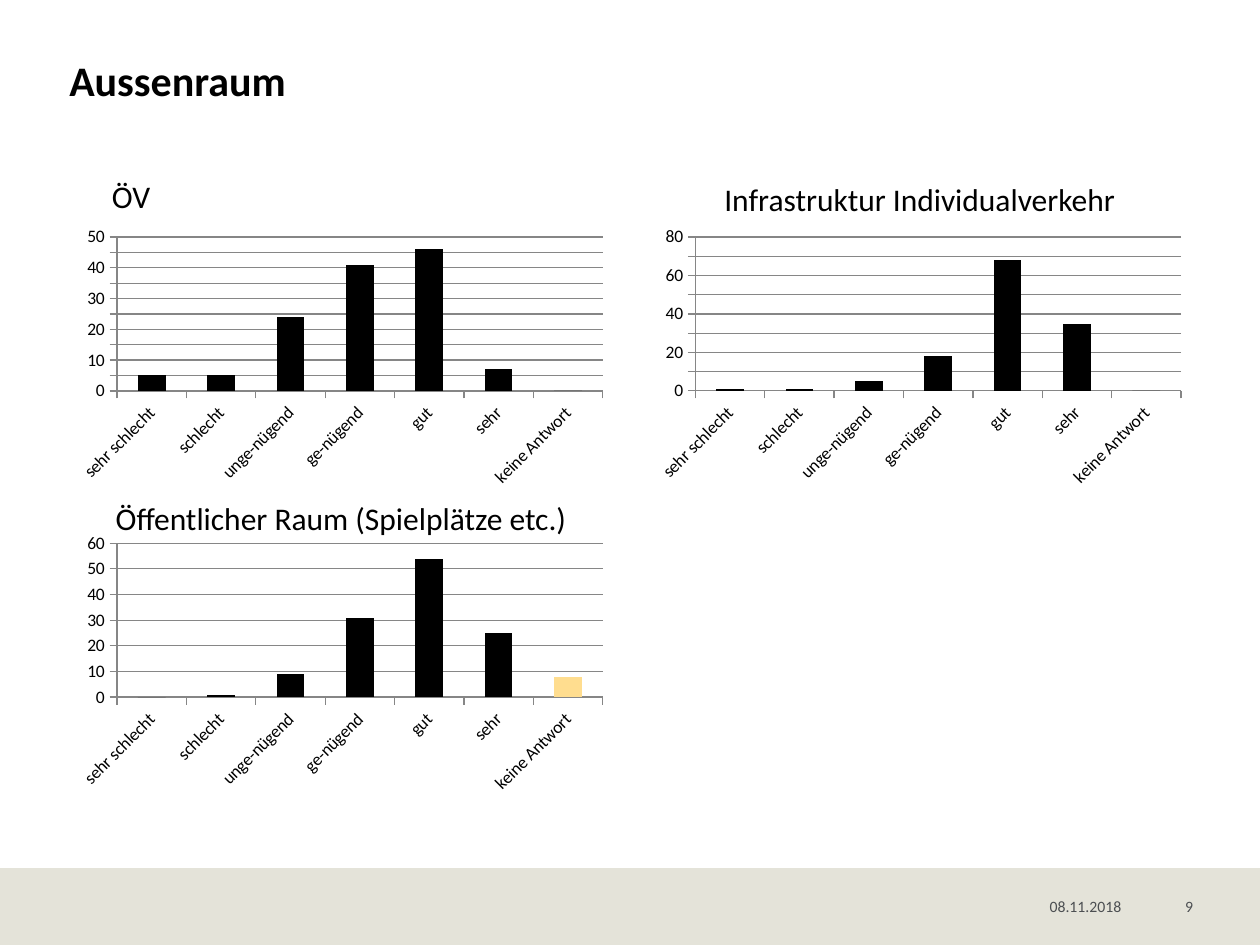
from dataclasses import dataclass

from lxml import etree
from pptx import Presentation
from pptx import util as u
from pptx.chart.data import CategoryChartData
from pptx.dml.color import RGBColor
from pptx.enum import chart as charts, shapes, text
from pptx.oxml.ns import qn


@dataclass(frozen=True)
class Theme:
    font: str = "Calibri"
    black: RGBColor = RGBColor(0x00, 0x00, 0x00)
    band: RGBColor = RGBColor(0xE4, 0xE3, 0xD9)
    footer: RGBColor = RGBColor(0x4C, 0x4F, 0x52)
    grid: RGBColor = RGBColor(0x86, 0x86, 0x86)
    highlight: RGBColor = RGBColor(0xFF, 0xDD, 0x8F)
    title_size: int = 24
    heading_size: int = 18
    axis_size: int = 10
    footer_size: int = 9


THEME = Theme()
RATINGS = ["sehr schlecht", "schlecht", "unge-nügend", "ge-nügend",
           "gut", "sehr", "keine Antwort"]
CHART_WIDTH, CHART_HEIGHT = 4.32, 2.15
LEFT, RIGHT = 0.55, 5.14
TOP, BOTTOM = 1.76, 4.19

# Heading, heading box, chart position, values, axis maximum, axis step, coloured bars
QUESTIONS = [
    ("ÖV", (0.79, 1.36, 0.51, 0.4), (LEFT, TOP),
     [5, 5, 24, 41, 46, 7, 0], 50, 5, {}),
    ("Infrastruktur Individualverkehr", (5.65, 1.38, 3.45, 0.4), (RIGHT, TOP),
     [1, 1, 5, 18, 68, 35, 0], 80, 10, {}),
    ("Öffentlicher Raum (Spielplätze etc.)", (0.82, 3.91, 3.83, 0.4), (LEFT, BOTTOM),
     [0, 1, 9, 31, 54, 25, 8], 60, 10, {6: THEME.highlight}),
]


def set_all(target, values):
    for name, value in values.items():
        setattr(target, name, value)


def style_font(font, size, color, bold=False):
    set_all(font, {"name": THEME.font, "size": u.Pt(size), "bold": bold})
    font.color.rgb = color


def add_text(slide, box, wording, size, color, bold=False,
             align=text.PP_ALIGN.LEFT, **frame_format):
    shape = slide.shapes.add_textbox(*map(u.Inches, box))
    set_all(shape.text_frame, frame_format)
    paragraph = shape.text_frame.paragraphs[0]
    paragraph.alignment = align
    run = paragraph.add_run()
    run.text = wording
    style_font(run.font, size, color, bold)


def no_margins():
    return {f"margin_{side}": 0 for side in ("left", "top", "right", "bottom")}


def add_title(slide, box):
    add_text(slide, box, "Aussenraum", THEME.title_size, THEME.black, bold=True,
             word_wrap=True, **no_margins())


def add_footer(slide, box):
    left, top, width, height = box
    band = slide.shapes.add_shape(shapes.MSO_SHAPE.RECTANGLE, *map(u.Inches, box))
    band.shadow.inherit = False
    band.fill.solid()
    band.fill.fore_color.rgb = THEME.band
    band.line.fill.background()

    # Date and page number
    frame_format = {"word_wrap": True, "vertical_anchor": text.MSO_ANCHOR.BOTTOM,
                    **no_margins()}
    for wording, offset, field_width, align in (
            ("08.11.2018", 8.33, 0.71, text.PP_ALIGN.LEFT),
            ("9", 9.04, 0.43, text.PP_ALIGN.RIGHT)):
        add_text(slide, (left + offset, top + 0.04, field_width, 0.34), wording,
                 THEME.footer_size, THEME.footer, align=align, **frame_format)


def style_axis(axis):
    axis.major_tick_mark = charts.XL_TICK_MARK.OUTSIDE
    axis.minor_tick_mark = charts.XL_TICK_MARK.NONE
    axis.format.line.color.rgb = THEME.grid
    style_font(axis.tick_labels.font, THEME.axis_size, THEME.black)


def add_rating_chart(slide, box, values, maximum, step, point_colors):
    data = CategoryChartData()
    data.categories = RATINGS
    data.add_series("Series 1", values)
    chart = slide.shapes.add_chart(charts.XL_CHART_TYPE.COLUMN_CLUSTERED,
                                   *map(u.Inches, box), data).chart
    set_all(chart, {"has_legend": False, "has_title": False})
    style_font(chart.font, THEME.axis_size, THEME.black)

    # Axes, with slanted category labels
    style_axis(chart.category_axis)
    body = chart.category_axis._element.find(qn("c:txPr")).find(qn("a:bodyPr"))
    set_all_xml = {"rot": "-2700000", "vert": "horz"}
    for name, value in set_all_xml.items():
        body.set(name, value)
    value_axis = chart.value_axis
    style_axis(value_axis)
    set_all(value_axis, {"minimum_scale": 0, "maximum_scale": maximum,
                         "major_unit": step, "has_major_gridlines": True})
    value_axis.major_gridlines.format.line.color.rgb = THEME.grid

    # Bars
    plot = chart.plots[0]
    set_all(plot, {"gap_width": 150, "vary_by_categories": False})
    series = plot.series[0]
    series.invert_if_negative = False
    fills = [series.format.fill]
    colors = [THEME.black]
    for index, color in point_colors.items():
        fills.append(series.points[index].format.fill)
        colors.append(color)
    for fill, color in zip(fills, colors):
        fill.solid()
        fill.fore_color.rgb = color


def main():
    presentation = Presentation()
    set_all(presentation, {"slide_width": u.Inches(10), "slide_height": u.Inches(7.5)})
    slide = presentation.slides.add_slide(presentation.slide_layouts[6])

    add_footer(slide, (0, 6.89, 10, 0.61))
    add_title(slide, (0.55, 0.43, 8.91, 0.4))
    for heading, heading_box, position, values, maximum, step, colors in QUESTIONS:
        add_text(slide, heading_box, heading, THEME.heading_size, THEME.black,
                 word_wrap=False, auto_size=text.MSO_AUTO_SIZE.SHAPE_TO_FIT_TEXT)
        add_rating_chart(slide, (*position, CHART_WIDTH, CHART_HEIGHT),
                         values, maximum, step, colors)

    presentation.save("out.pptx")


if __name__ == "__main__":
    main()
